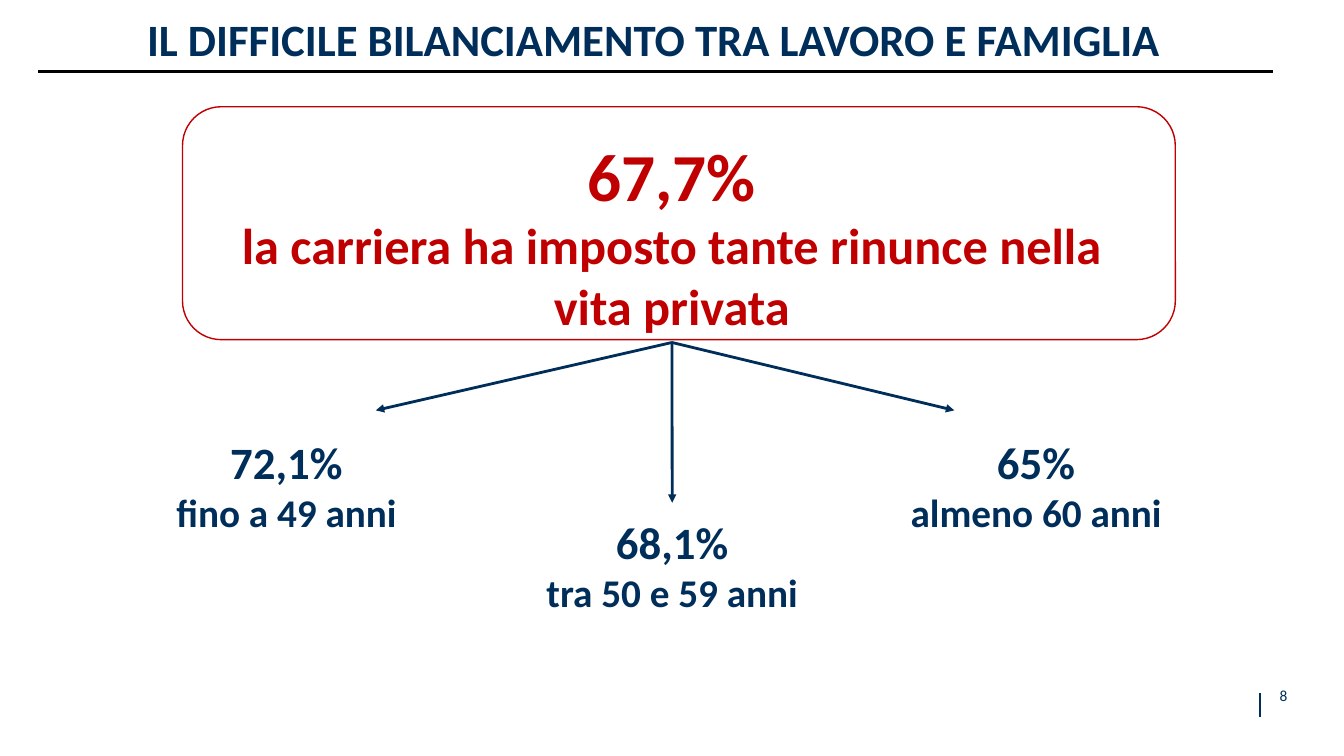
from dataclasses import dataclass

from lxml.etree import SubElement
from pptx import Presentation
from pptx.dml.color import RGBColor
from pptx.enum.shapes import MSO_CONNECTOR, MSO_SHAPE
from pptx.enum.text import MSO_ANCHOR, MSO_AUTO_SIZE, PP_ALIGN
from pptx.oxml.ns import qn
from pptx.util import Cm, Pt


@dataclass(frozen=True)
class Theme:
    """Colours, font and type sizes of the slide."""

    navy: RGBColor = RGBColor(0x00, 0x2E, 0x5A)
    red: RGBColor = RGBColor(0xC0, 0x00, 0x00)
    black: RGBColor = RGBColor(0x00, 0x00, 0x00)
    font: str = "Calibri"
    title: int = 32
    headline: int = 48
    claim: int = 36
    share: int = 32
    age: int = 28
    number: int = 11


@dataclass(frozen=True)
class Box:
    """A rectangle in centimetres."""

    left: float
    top: float
    width: float
    height: float

    def lengths(self):
        """Return the rectangle as lengths in Cm."""
        return [Cm(n) for n in (self.left, self.top, self.width, self.height)]


THEME = Theme()
AGE_GROUPS = [
    ("72,1%", "fino a 49 anni", Box(3.18, 10.82, 8.08, 2.82), (6.29, -0.48)),
    ("68,1%", "tra 50 e 59 anni", Box(12.9, 12.85, 8.08, 2.82), (4.04, -0.18)),
    ("65%", "almeno 60 anni", Box(22.07, 10.82, 8.08, 2.82), (1.98, -0.48)),
]


def set_values(target, values):
    """Set every attribute named in values on target."""
    for attribute, value in values.items():
        setattr(target, attribute, value)


def write_lines(frame, lines, color, bold=True, frame_format=None, line_format=None):
    """Write (text, size) lines as centred paragraphs."""
    set_values(frame, {"word_wrap": True, "auto_size": MSO_AUTO_SIZE.NONE,
                       "vertical_anchor": MSO_ANCHOR.TOP} | (frame_format or {}))
    for index, (text, size) in enumerate(lines):
        paragraph = frame.add_paragraph() if index else frame.paragraphs[0]
        set_values(paragraph, {"text": text, "alignment": PP_ALIGN.CENTER} | (line_format or {}))
        set_values(paragraph.font, {"name": THEME.font, "size": Pt(size), "bold": bold})
        paragraph.font.color.rgb = color


def draw_line(slide, start, end, color, width, arrow=False):
    """Draw a straight line between two points and return it."""
    line = slide.shapes.add_connector(
        MSO_CONNECTOR.STRAIGHT, *[Cm(n) for n in (*start, *end)])
    line.line.color.rgb = color
    line.line.width = Pt(width)
    if arrow:
        SubElement(line.line._get_or_add_ln(), qn("a:tailEnd"), type="triangle")
    SubElement(line._element.spPr, qn("a:effectLst"))
    return line


def add_heading(slide, box):
    """Place the title and the rule beneath it."""
    title = slide.shapes.title
    set_values(title, dict(zip(("left", "top", "width", "height"), box.lengths())))
    write_lines(title.text_frame,
                [("IL DIFFICILE BILANCIAMENTO TRA LAVORO E FAMIGLIA", THEME.title)],
                THEME.navy, line_format={"line_spacing": 0.9, "space_before": Pt(0)})
    rule_y = box.top + box.height - 0.03
    draw_line(slide, (box.left + 0.1, rule_y), (box.left + box.width - 0.02, rule_y),
              THEME.black, 2)


def add_statement(slide, box):
    """Place the framed main finding and return its text box."""
    inner = Box(box.left + 0.18, box.top + 0.56, box.width - 0.71, box.height - 0.49)
    statement = slide.shapes.add_textbox(*inner.lengths())
    write_lines(statement.text_frame,
                [("67,7%", THEME.headline),
                 ("la carriera ha imposto tante rinunce nella vita privata", THEME.claim)],
                THEME.red)
    border = slide.shapes.add_shape(MSO_SHAPE.ROUNDED_RECTANGLE, *box.lengths())
    border.shadow.inherit = False
    border.fill.background()
    border.line.color.rgb = THEME.red
    border.line.width = Pt(1)
    return statement


def add_age_group(slide, box, share, age, tip, statement):
    """Place one age group and the arrow that leads to it."""
    end = (box.left + tip[0], box.top + tip[1])
    arrow = draw_line(slide, end, end, THEME.navy, 2, arrow=True)
    arrow.begin_connect(statement, 2)
    group = slide.shapes.add_textbox(*box.lengths())
    write_lines(group.text_frame, [(share, THEME.share), (age, THEME.age)], THEME.navy)


def add_page_number(slide, box):
    """Place the page number and the mark to its left."""
    mark_x = box.left - 0.15
    draw_line(slide, (mark_x, box.top + 0.91), (mark_x, box.top + 0.3), THEME.navy, 1.5)
    number = slide.shapes.add_textbox(*box.lengths())
    margins = {f"margin_{side}": Cm(0.15) for side in ("left", "top", "right", "bottom")}
    write_lines(number.text_frame, [("8", THEME.number)], THEME.navy, bold=False,
                frame_format=margins | {"word_wrap": False,
                                        "vertical_anchor": MSO_ANCHOR.BOTTOM})


def main():
    """Build the slide and save it."""
    deck = Presentation()
    set_values(deck, {"slide_width": Cm(33.87), "slide_height": Cm(19.05)})
    slide = deck.slides.add_slide(deck.slide_layouts[5])
    add_page_number(slide, Box(31.9, 17.15, 0.89, 0.76))
    add_heading(slide, Box(0.86, 0.33, 31.24, 1.5))
    statement = add_statement(slide, Box(4.6, 2.69, 25.02, 5.87))
    for share, age, box, tip in AGE_GROUPS:
        add_age_group(slide, box, share, age, tip, statement)
    deck.save("out.pptx")


if __name__ == "__main__":
    main()
